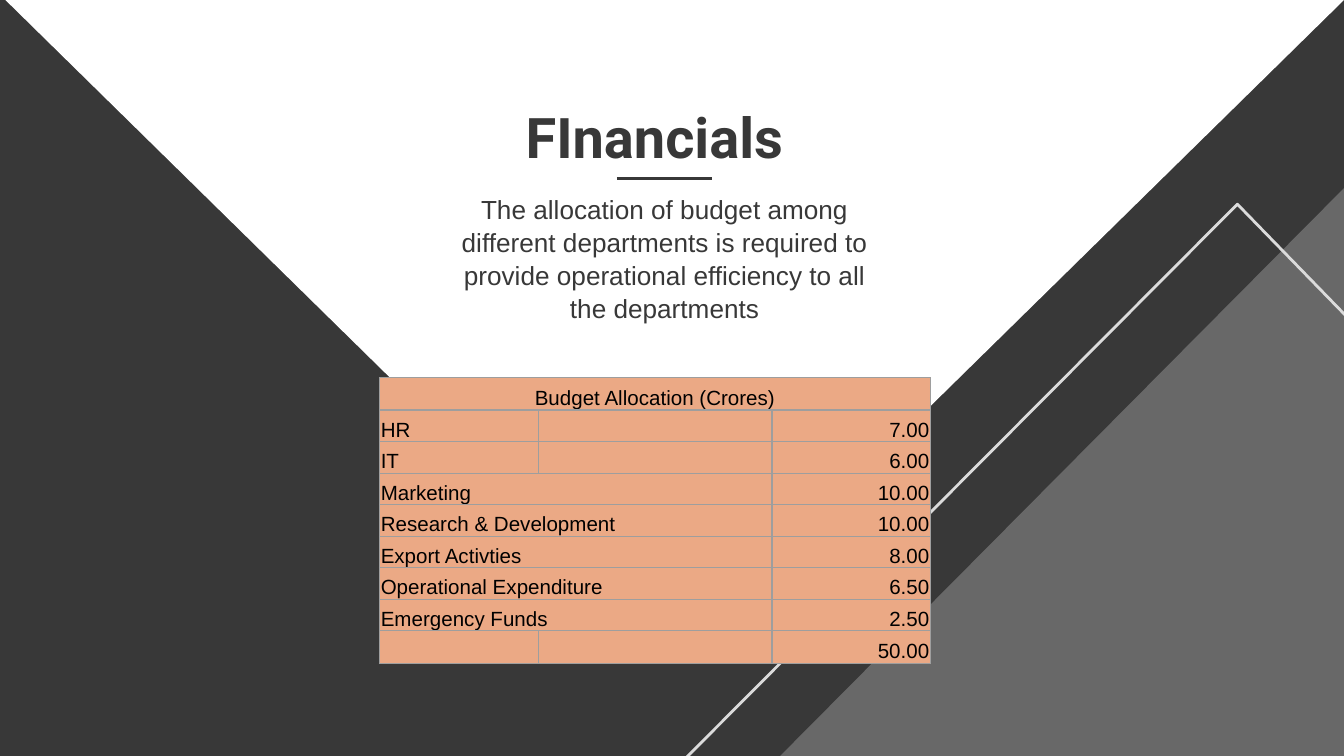
from lxml.etree import SubElement
from pptx import Presentation
from pptx.dml.color import RGBColor
from pptx.enum.shapes import MSO_CONNECTOR, MSO_SHAPE
from pptx.enum.text import MSO_ANCHOR, PP_ALIGN
from pptx.oxml import parse_xml
from pptx.oxml.ns import nsdecls, qn
from pptx.util import Pt

# Content
TITLE = "FInancials"
SUBTITLE = ("The allocation of budget among different departments is required "
            "to provide operational efficiency to all the departments")
TABLE_HEAD = "Budget Allocation (Crores)"
BUDGET = [  # department, amount, name spans two columns
    ("HR", "7.00", False),
    ("IT", "6.00", False),
    ("Marketing", "10.00", True),
    ("Research & Development", "10.00", True),
    ("Export Activties", "8.00", True),
    ("Operational Expenditure", "6.50", True),
    ("Emergency Funds", "2.50", True),
    ("", "50.00", False),
]

# Look
DARK, GREY, WHITE, PALE = "383838", "686868", "FFFFFF", "DBDBDB"
CELL, BORDER, BLACK = "EBA985", "9E9E9E", "000000"
COLS = [85, 125.3, 85]
ROWS = [17.4] + [16.9] * 7 + [17.4]


def rgb(value):
    return RGBColor.from_string(value)


def add_triangle(kind, box, fill=None, line=None, rotation=0):
    s = slide.shapes.add_shape(kind, *map(Pt, box))
    s.shadow.inherit = False
    s.rotation = rotation
    if fill:
        s.fill.solid()
        s.fill.fore_color.rgb = rgb(fill)
    else:
        s.fill.background()
    if line:
        s.line.color.rgb = rgb(line)
        s.line.width = Pt(1.5)
    else:
        s.line.fill.background()
    return s


def write(tf, text, size, font, color, align, bold=False):
    p = tf.paragraphs[0]
    p.alignment = align
    r = p.add_run()
    r.text = text
    r.font.size, r.font.name, r.font.bold = Pt(size), font, bold
    r.font.color.rgb = rgb(color)
    return p


def add_text(box, anchor, *style, **options):
    tf = slide.shapes.add_textbox(*map(Pt, box)).text_frame
    tf.word_wrap = True
    tf.vertical_anchor = anchor
    tf.margin_left = tf.margin_right = tf.margin_top = tf.margin_bottom = Pt(7.2)
    return write(tf, *style, **options)


def style_cell(cell):
    cell.margin_left = cell.margin_right = cell.margin_top = Pt(0.7)
    cell.margin_bottom = 0
    cell.vertical_anchor = MSO_ANCHOR.BOTTOM
    tc_pr = cell._tc.get_or_add_tcPr()
    for side in ("lnL", "lnR", "lnT", "lnB"):
        tc_pr.append(parse_xml(
            f'<a:{side} {nsdecls("a")} w="{Pt(0.75)}"><a:solidFill>'
            f'<a:srgbClr val="{BORDER}"/></a:solidFill></a:{side}>'))
    cell.fill.solid()
    cell.fill.fore_color.rgb = rgb(CELL)
    # Small end mark, so that empty cells do not stretch their row
    cell.text_frame.paragraphs[0]._p.get_or_add_endParaRPr().set("sz", "1100")


def fill_cell(cell, text, align):
    if text:
        write(cell.text_frame, text, 11, "Arial", BLACK, align)


prs = Presentation()
prs.slide_width, prs.slide_height = Pt(720), Pt(405)
slide = prs.slides.add_slide(prs.slide_layouts[6])

# Background triangles
slide.background.fill.solid()
slide.background.fill.fore_color.rgb = rgb(DARK)
add_triangle(MSO_SHAPE.RIGHT_TRIANGLE, (412.6, 101.5, 308.9, 306.7), GREY, rotation=270)
add_triangle(MSO_SHAPE.ISOSCELES_TRIANGLE, (2.9, 0, 717.1, 352.1), WHITE, rotation=180)
outline = add_triangle(MSO_SHAPE.ISOSCELES_TRIANGLE, (282.2, 109.4, 752.4, 382.3), line=PALE)
outline.adjustments[0] = 0.506

# Title, subtitle and the rule between them
add_text((123.8, 49.7, 453.6, 46.1), MSO_ANCHOR.MIDDLE,
         TITLE, 30, "Roboto", DARK, PP_ALIGN.CENTER, bold=True)
p = add_text((236.9, 95.8, 238.3, 78.5), MSO_ANCHOR.TOP,
             SUBTITLE, 14, "Arial", DARK, PP_ALIGN.CENTER)
p.line_spacing = 1.05
rule = slide.shapes.add_connector(MSO_CONNECTOR.STRAIGHT, Pt(330.5), Pt(95.8), Pt(381.6), Pt(95.8))
rule.line.color.rgb = rgb(DARK)
rule.line.width = Pt(1.5)
SubElement(rule._element.spPr, qn("a:effectLst"))

# Budget table
table = slide.shapes.add_table(len(ROWS), len(COLS), Pt(203.3), Pt(202.3),
                               Pt(sum(COLS)), Pt(sum(ROWS))).table
table.first_row = table.horz_banding = False
for column, width in zip(table.columns, COLS):
    column.width = Pt(width)
for row, height in zip(table.rows, ROWS):
    row.height = Pt(height)
    for cell in row.cells:
        style_cell(cell)

table.cell(0, 0).merge(table.cell(0, 2))
fill_cell(table.cell(0, 0), TABLE_HEAD, PP_ALIGN.CENTER)
for i, (name, amount, wide) in enumerate(BUDGET, start=1):
    if wide:
        table.cell(i, 0).merge(table.cell(i, 1))
    fill_cell(table.cell(i, 0), name, PP_ALIGN.LEFT)
    fill_cell(table.cell(i, 2), amount, PP_ALIGN.RIGHT)

prs.save("out.pptx")
